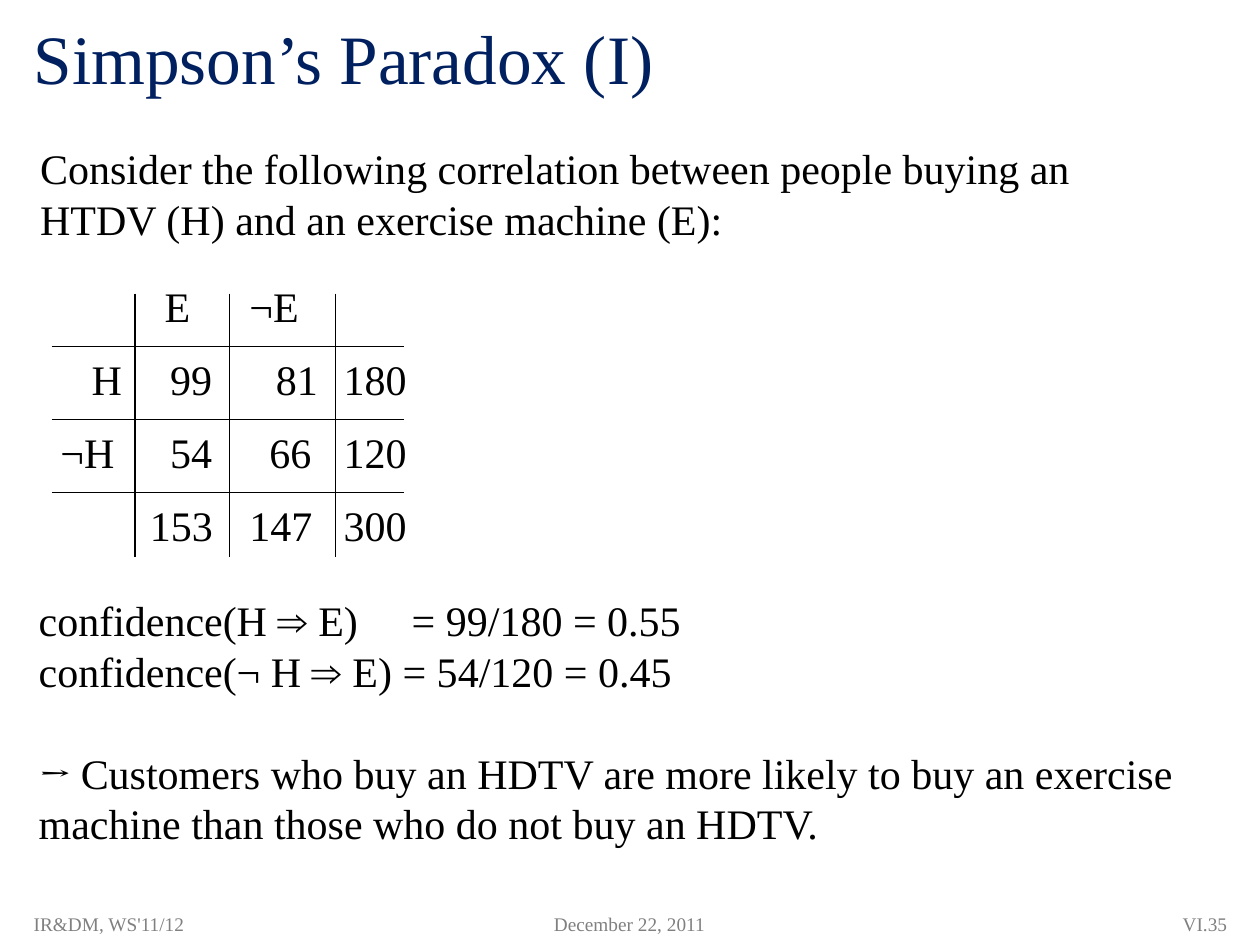
from lxml.etree import SubElement
from pptx import Presentation
from pptx.dml.color import RGBColor
from pptx.enum.shapes import MSO_CONNECTOR
from pptx.enum.text import MSO_ANCHOR, MSO_AUTO_SIZE, PP_ALIGN
from pptx.oxml import parse_xml
from pptx.oxml.ns import nsdecls, qn
from pptx.util import Cm, Pt


def color(value):
    return RGBColor.from_string(value)


def add_text(box, lines, size=24, ink="000000", align=PP_ALIGN.LEFT):
    shape = slide.shapes.add_textbox(*[Cm(length) for length in box])
    frame = shape.text_frame
    body = size == 24
    frame.word_wrap = not body
    frame.auto_size = MSO_AUTO_SIZE.SHAPE_TO_FIT_TEXT if body else MSO_AUTO_SIZE.NONE
    frame.vertical_anchor = MSO_ANCHOR.TOP if body else MSO_ANCHOR.MIDDLE
    for index, line in enumerate(lines):
        paragraph = frame.add_paragraph() if index else frame.paragraphs[0]
        paragraph.text = line
        paragraph.alignment = align
        if body:
            paragraph.line_spacing = Pt(29)
        paragraph.font.name = "Times New Roman"
        paragraph.font.size = Pt(size)
        paragraph.font.color.rgb = color(ink)
    return frame.paragraphs


presentation = Presentation()
presentation.slide_width = Cm(25.4)
presentation.slide_height = Cm(19.05)
slide = presentation.slides.add_slide(presentation.slide_layouts[6])

add_text((0.43, 0.2, 24.56, 1.9), ["Simpson’s Paradox (I)"], 39.6, "002060")

footers = [
    (9.73, 5.92, "December 22, 2011", PP_ALIGN.CENTER),
    (0.43, 7.62, "IR&DM, WS'11/12", PP_ALIGN.LEFT),
    (19.48, 5.51, "VI.35", PP_ALIGN.RIGHT),
]
for left, width, text, align in footers:
    add_text((left, 18.21, width, 0.84), [text], 11, "808080", align)

grid_top = 5.52
row_height = 1.47
column_lines = [(x, 5.92, x, 11.23) for x in (2.72, 4.62, 6.76)]
row_lines = [(1.04, grid_top + row * row_height, 8.15, grid_top + row * row_height) for row in (1, 2, 3)]
for ends in column_lines + row_lines:
    connector = slide.shapes.add_connector(MSO_CONNECTOR.STRAIGHT, *[Cm(length) for length in ends])
    connector.line.color.rgb = color("000000")
    connector.line.width = Pt(0.75)
    SubElement(connector._element.spPr, qn("a:effectLst"))

rows = [
    [(3.07, 1.04, "E"), (4.78, 1.65, "¬E")],
    [(1.6, 1.12, "H"), (3.18, 1.37, "99"), (5.31, 1.37, "81"), (6.68, 1.8, "180")],
    [(0.97, 1.75, "¬H"), (3.18, 1.37, "54"), (5.18, 1.37, "66"), (6.68, 1.8, "120")],
    [(2.77, 1.8, "153"), (4.78, 1.8, "147"), (6.68, 1.8, "300")],
]
for row, cells in enumerate(rows):
    for left, width, text in cells:
        add_text((left, grid_top + row * row_height, width, 1.27), [text])

add_text((0.56, 2.74, 21.46, 2.31), [
    "Consider the following correlation between people buying an",
    "HTDV (H) and an exercise machine (E):",
])
confidence, negated_confidence, conclusion, conclusion_end = add_text((0.53, 11.86, 23.8, 5.38), [
    "confidence(H ⇒ E)\t= 99/180 = 0.55",
    "confidence(¬ H ⇒ E) = 54/120 = 0.45",
    "→ ",
    "machine than those who do not buy an HDTV.",
])
tabs = parse_xml(f'<a:tabLst {nsdecls("a")}><a:tab pos="{Cm(7.52)}" algn="l"/></a:tabLst>')
confidence._p.pPr.find(qn("a:defRPr")).addprevious(tabs)
conclusion.space_before = Pt(29)
conclusion.runs[0].font.name = "Cambria"
conclusion.add_run().text = "Customers who buy an HDTV are more likely to buy an exercise"

presentation.save("out.pptx")
